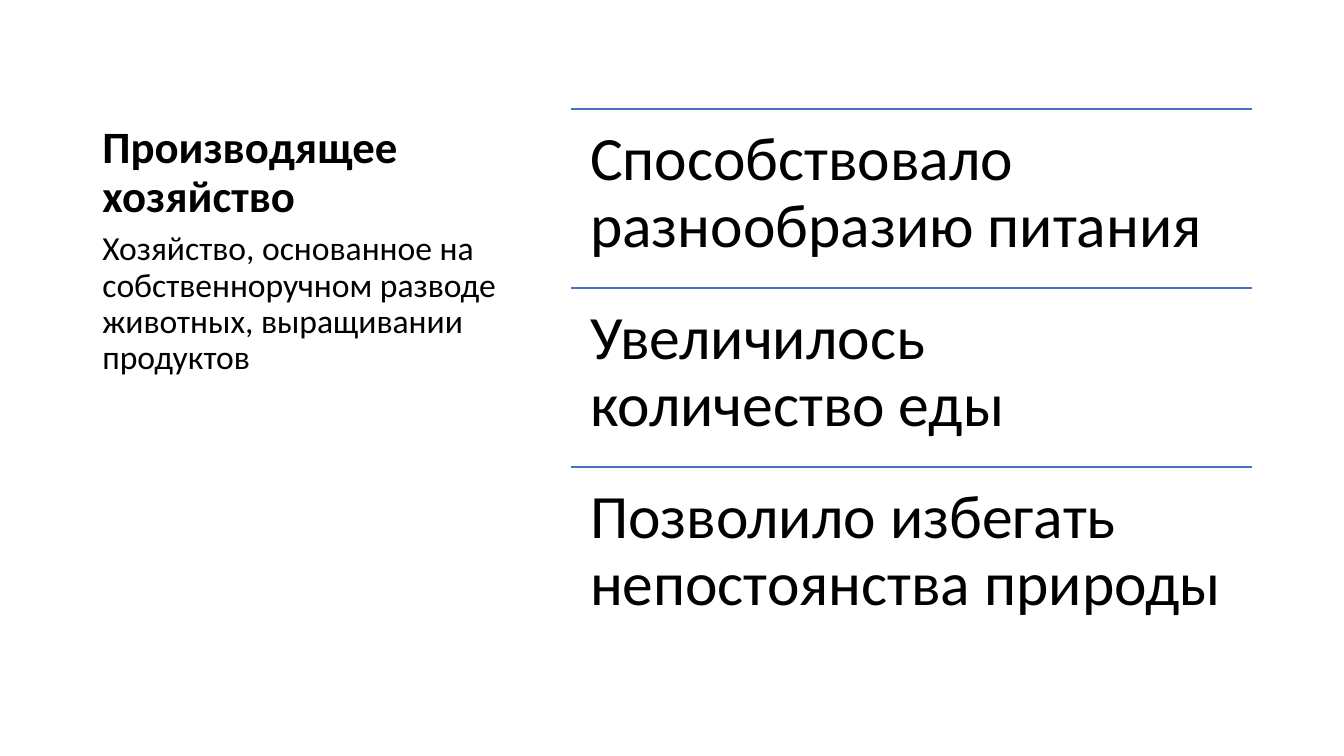
from lxml.etree import SubElement
from pptx import Presentation
from pptx.dml.color import RGBColor
from pptx.enum.shapes import MSO_CONNECTOR as Connector
from pptx.enum.text import MSO_ANCHOR as Anchor
from pptx.oxml.ns import qn
from pptx.util import Cm, Pt

COLORS = {"text": "000000", "rule": "4472C4"}

presentation = Presentation()
presentation.slide_width = Cm(33.87)
presentation.slide_height = Cm(19.05)
slide = presentation.slides.add_slide(presentation.slide_layouts[6])


def add_text(text, left, top, width, height, font_format, frame_format):
    shape = slide.shapes.add_textbox(Cm(left), Cm(top), Cm(width), Cm(height))
    frame = shape.text_frame
    frame.word_wrap = True
    for name, value in frame_format.items():
        setattr(frame, name, value)
    paragraph = frame.paragraphs[0]
    paragraph.line_spacing = 0.9
    run = paragraph.add_run()
    run.text = text
    run.font.name = "Calibri"
    run.font.color.rgb = RGBColor.from_string(COLORS["text"])
    for name, value in font_format.items():
        setattr(run.font, name, value)


column_left, column_width = 2.33, 10.92
add_text("Производящее хозяйство", column_left, 1.27, column_width, 4.45,
         {"size": Pt(32), "bold": True}, {"vertical_anchor": Anchor.BOTTOM})
add_text("Хозяйство, основанное на собственноручном разводе животных, выращивании продуктов",
         column_left, 5.72, column_width, 10.58, {"size": Pt(24)}, {})

benefits = [
    "Способствовало разнообразию питания",
    "Увеличилось количество еды",
    "Позволило избегать непостоянства природы",
]
list_left, list_top, list_width, row_height = 14.4, 2.75, 17.15, 4.51
sides = ("left", "top", "right", "bottom")
row_format = {f"margin_{side}": Cm(0.47) for side in sides}

for index, benefit in enumerate(benefits):
    top = list_top + index * row_height
    rule = slide.shapes.add_connector(
        Connector.STRAIGHT, Cm(list_left), Cm(top), Cm(list_left + list_width), Cm(top))
    rule.line.color.rgb = RGBColor.from_string(COLORS["rule"])
    rule.line.width = Pt(1)
    SubElement(rule._element.spPr, qn("a:effectLst"))
    add_text(benefit, list_left, top, list_width, row_height, {"size": Pt(44)}, row_format)

presentation.save("out.pptx")
